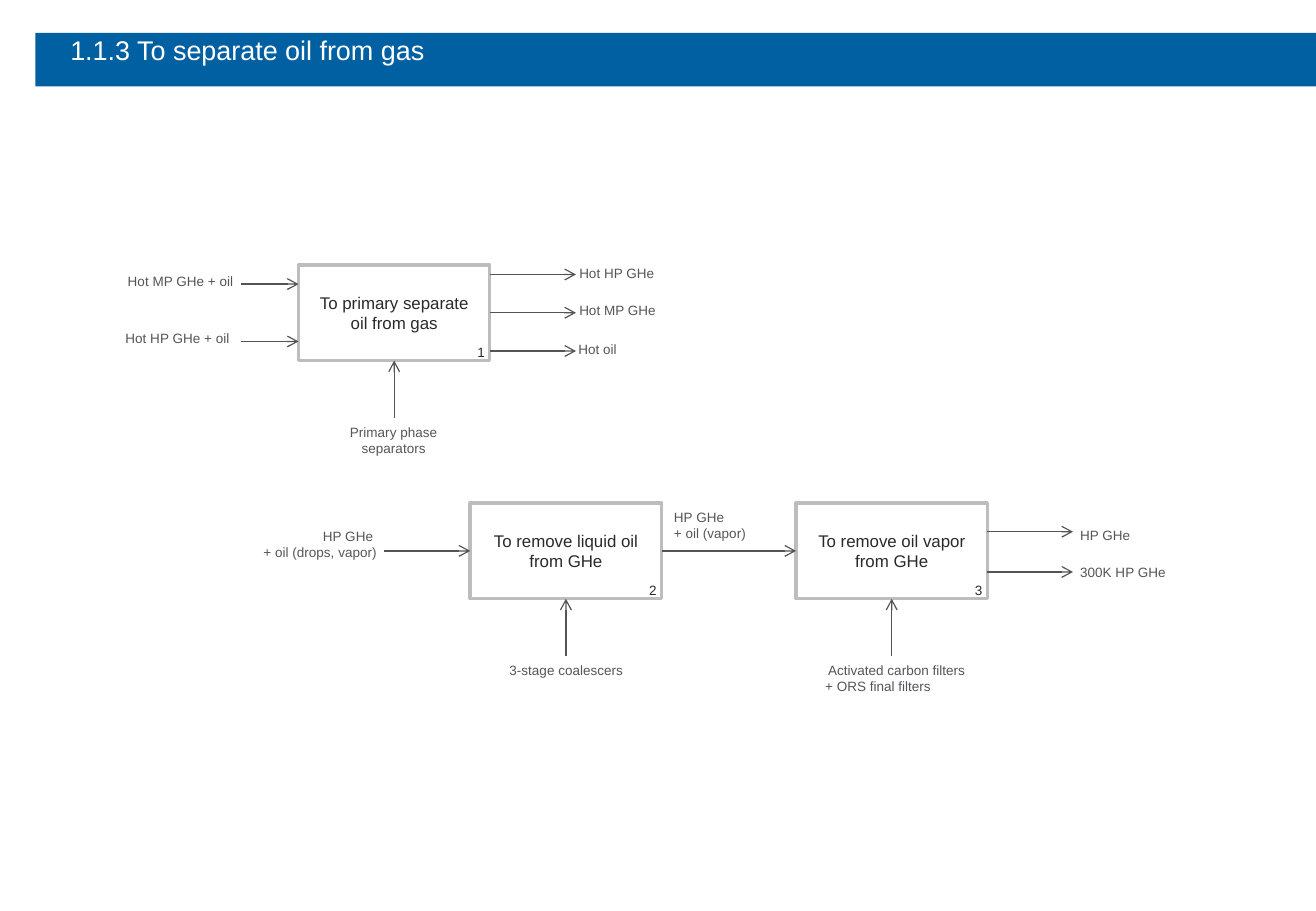
from lxml import etree
from pptx import Presentation
from pptx.dml.color import RGBColor
from pptx.enum.shapes import MSO_CONNECTOR as Connector, MSO_SHAPE as Shape
from pptx.enum.text import MSO_ANCHOR as Anchor, MSO_AUTO_SIZE as AutoSize, PP_ALIGN as Align
from pptx.oxml.ns import qn
from pptx.util import Cm, Pt

FONT = "Arial"
BLUE, WHITE, BORDER = "0060A1", "FFFFFF", "BDBDBD"
DARK, GREY, ARROW = "2A2A2D", "55555A", "535358"
SLIDE_WIDTH, SLIDE_HEIGHT = 27.51, 19.05
BOX_WIDTH, BOX_HEIGHT = 4.0, 2.0
SUPPLY_LENGTH = 1.2
TOP, BOTTOM = 5.54, 10.52
LEFT_SIDE, BOTTOM_SIDE, RIGHT_SIDE = 1, 2, 3


def color(value):
    return RGBColor.from_string(value)


def add_para(frame, text, size, ink, align, first):
    para = frame.paragraphs[0] if first else frame.add_paragraph()
    para.alignment = align
    span = para.add_run()
    span.text = text
    span.font.name = FONT
    span.font.size = Pt(size)
    span.font.color.rgb = color(ink)
    return para


def add_rect(page, left, top, width, height, fill, border=None):
    rect = page.shapes.add_shape(Shape.RECTANGLE, Cm(left), Cm(top), Cm(width), Cm(height))
    rect.shadow.inherit = False
    rect.fill.solid()
    rect.fill.fore_color.rgb = color(fill)
    if border:
        rect.line.color.rgb = color(border)
        rect.line.width = Pt(2)
    else:
        rect.line.fill.background()
    return rect


def add_label(page, left, top, width, lines, align=Align.LEFT, ink=GREY, wrap=True):
    height = 0.6 if len(lines) == 1 else 0.94
    box = page.shapes.add_textbox(Cm(left), Cm(top), Cm(width), Cm(height))
    frame = box.text_frame
    frame.word_wrap = wrap
    frame.auto_size = AutoSize.SHAPE_TO_FIT_TEXT
    return [add_para(frame, line, 8, ink, align, index == 0)
            for index, line in enumerate(lines)]


def add_title(page, text):
    add_rect(page, 0.74, 0.69, SLIDE_WIDTH - 0.74, 1.12, BLUE)
    box = page.shapes.add_textbox(Cm(1.47), Cm(0.71), Cm(24.77), Cm(0.99))
    frame = box.text_frame
    frame.word_wrap = True
    frame.margin_left = frame.margin_top = frame.margin_right = frame.margin_bottom = 0
    add_para(frame, text, 16, WHITE, Align.LEFT, True)


def add_arrow(page, start, end, source=None, target=None):
    """Draw an arrow; source and target are optional (shape, side) joints."""
    points = [Cm(value) for value in (*start, *end)]
    arrow = page.shapes.add_connector(Connector.STRAIGHT, *points)
    if source:
        arrow.begin_connect(*source)
    if target:
        arrow.end_connect(*target)
    arrow.line.color.rgb = color(ARROW)
    arrow.line.width = Pt(0.75)
    etree.SubElement(arrow.line._get_or_add_ln(), qn("a:tailEnd"), type="arrow")
    etree.SubElement(arrow._element.spPr, qn("a:effectLst"))


def add_process(page, left, top, text, number):
    """Draw a numbered process box with the supply arrow that enters from below."""
    box = add_rect(page, left, top, BOX_WIDTH, BOX_HEIGHT, WHITE, BORDER)
    frame = box.text_frame
    frame.word_wrap = True
    frame.vertical_anchor = Anchor.MIDDLE
    add_para(frame, text, 10, DARK, Align.CENTER, True)
    add_label(page, left + BOX_WIDTH - 0.54, top + 1.53, 0.69, [str(number)],
              Align.RIGHT, DARK, wrap=False)
    center, base = left + BOX_WIDTH / 2, top + BOX_HEIGHT
    add_arrow(page, (center, base + SUPPLY_LENGTH), (center, base),
              target=(box, BOTTOM_SIDE))
    return box


def main():
    deck = Presentation()
    deck.slide_width, deck.slide_height = Cm(SLIDE_WIDTH), Cm(SLIDE_HEIGHT)
    page = deck.slides.add_slide(deck.slide_layouts[6])
    add_title(page, "1.1.3 To separate oil from gas")

    primary_left, liquid_left, vapor_left = 6.24, 9.83, 16.64
    primary = add_process(page, primary_left, TOP, "To primary separate oil from gas", 1)
    liquid = add_process(page, liquid_left, BOTTOM, "To remove liquid oil from GHe", 2)
    vapor = add_process(page, vapor_left, BOTTOM, "To remove oil vapor from GHe", 3)

    for offset in (0.4, 1.6):
        add_arrow(page, (5.03, TOP + offset), (primary_left, TOP + offset))
    primary_right = primary_left + BOX_WIDTH
    for offset, joint in ((0.2, None), (1.0, (primary, RIGHT_SIDE)), (1.8, None)):
        add_arrow(page, (primary_right, TOP + offset), (12.04, TOP + offset), source=joint)
    middle = BOTTOM + BOX_HEIGHT / 2
    add_arrow(page, (8.03, middle), (liquid_left, middle), target=(liquid, LEFT_SIDE))
    add_arrow(page, (liquid_left + BOX_WIDTH, middle), (vapor_left, middle),
              (liquid, RIGHT_SIDE), (vapor, LEFT_SIDE))
    vapor_right = vapor_left + BOX_WIDTH
    for offset in (0.6, 1.44):
        add_arrow(page, (vapor_right, BOTTOM + offset), (22.43, BOTTOM + offset))

    labels = [
        (2.36, 5.59, 2.77, ["Hot MP GHe + oil"], Align.RIGHT),
        (2.36, 6.78, 2.69, ["Hot HP GHe + oil"], Align.RIGHT),
        (11.86, 5.41, 2.31, ["Hot HP GHe"], Align.LEFT),
        (11.86, 6.2, 2.31, ["Hot MP GHe"], Align.LEFT),
        (11.84, 7.01, 2.31, ["Hot oil"], Align.LEFT),
        (6.63, 8.74, 3.2, ["Primary phase separators"], Align.CENTER),
        (4.83, 10.92, 3.3, ["HP GHe ", "+ oil (drops, vapor)"], Align.RIGHT),
        (13.84, 10.52, 2.79, ["HP GHe", "+ oil (vapor)"], Align.LEFT),
        (22.33, 10.9, 2.79, ["HP GHe"], Align.LEFT),
        (22.33, 11.68, 2.79, ["300K HP GHe"], Align.LEFT),
        (10.24, 13.72, 3.2, ["3-stage coalescers"], Align.CENTER),
    ]
    for label in labels:
        add_label(page, *label)

    filters = add_label(page, 16.84, 13.72, 3.81,
                        ["Activated carbon filters", "+ ORS final filters"], Align.CENTER)
    filters[1].alignment = Align.LEFT
    filters[1]._p.get_or_add_pPr().set("marL", str(Cm(0.16)))

    deck.save("out.pptx")


if __name__ == "__main__":
    main()
